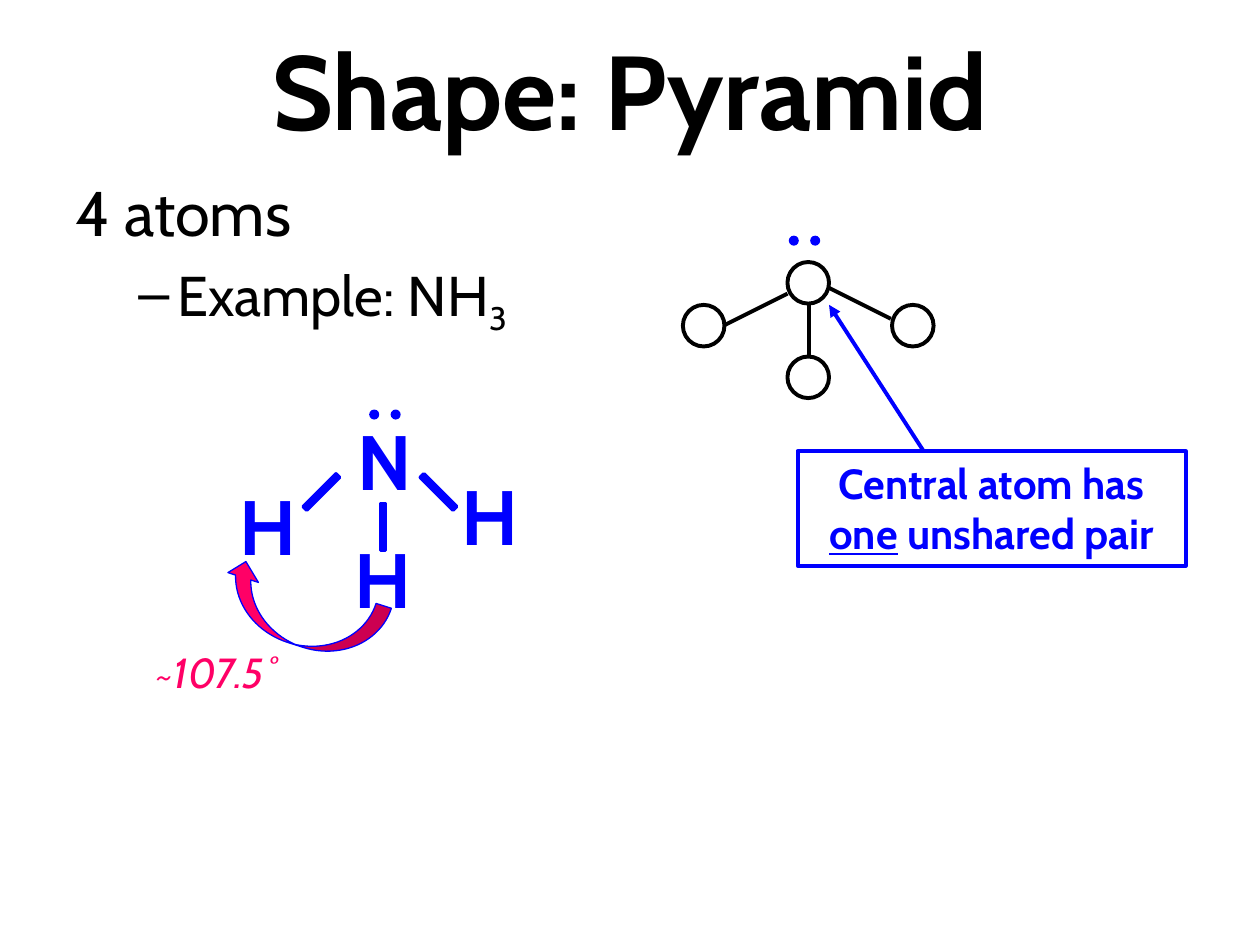
from dataclasses import dataclass, field

import pptx
import pptx.dml.color
import pptx.enum.shapes
import pptx.enum.text
import pptx.oxml.ns
import pptx.util
from lxml import etree
from pptx.util import Inches

SHAPE = pptx.enum.shapes.MSO_SHAPE
ALIGN = pptx.enum.text.PP_ALIGN
ANCHOR = pptx.enum.text.MSO_ANCHOR
qn = pptx.oxml.ns.qn

BLACK, WHITE, BLUE, PINK = "000000", "FFFFFF", "0000FF", "FF0066"
ATOM_SIZE = 0.33
DOT_SIZE = 0.08


@dataclass
class Span:
    text: str
    formats: dict = field(default_factory=dict)
    baseline: int = 0


@dataclass
class Para:
    spans: list[Span]
    size: float
    color: str = BLACK
    align: ALIGN = ALIGN.LEFT
    space_before: float = 0  # share of the text size
    margin: float = 0
    indent: float = 0
    bullet: str = ""
    formats: dict = field(default_factory=dict)


@dataclass
class Figure:
    kind: SHAPE
    left: float
    top: float
    width: float
    height: float
    fill: str = ""
    line: str = ""
    line_width: float = 2.25
    rotation: float = 0


@dataclass
class Line:
    start: tuple[float, float]
    end: tuple[float, float]
    color: str = BLACK
    arrow: bool = False


def rgb(value: str) -> pptx.dml.color.RGBColor:
    return pptx.dml.color.RGBColor.from_string(value)


def write(frame, paras: list[Para], anchor=ANCHOR.TOP) -> None:
    frame.word_wrap = True
    frame.vertical_anchor = anchor
    for index, item in enumerate(paras):
        para = frame.add_paragraph() if index else frame.paragraphs[0]
        para.alignment = item.align
        para.space_before = pptx.util.Pt(item.size * item.space_before)
        properties = para._p.get_or_add_pPr()
        properties.set("marL", str(Inches(item.margin)))
        properties.set("indent", str(Inches(item.indent)))
        if item.bullet:
            etree.SubElement(properties, qn("a:buChar")).set("char", item.bullet)
        for part in item.spans:
            span = para.add_run()
            span.text = part.text
            formats = {"name": "Cabin", "size": pptx.util.Pt(item.size)}
            for name, value in (formats | item.formats | part.formats).items():
                setattr(span.font, name, value)
            span.font.color.rgb = rgb(item.color)
            if part.baseline:
                span._r.get_or_add_rPr().set("baseline", str(part.baseline * 1000))


def add_text(page, left: float, top: float, width: float, height: float,
             paras: list[Para], anchor=ANCHOR.TOP) -> None:
    box = page.shapes.add_textbox(*map(Inches, (left, top, width, height)))
    write(box.text_frame, paras, anchor)


def add_figure(page, figure: Figure):
    place = (figure.left, figure.top, figure.width, figure.height)
    shape = page.shapes.add_shape(figure.kind, *map(Inches, place))
    shape.shadow.inherit = False
    shape.rotation = figure.rotation
    if figure.fill:
        shape.fill.solid()
        shape.fill.fore_color.rgb = rgb(figure.fill)
    else:
        shape.fill.background()
    if figure.line:
        shape.line.color.rgb = rgb(figure.line)
        shape.line.width = pptx.util.Pt(figure.line_width)
    else:
        shape.line.fill.background()
    return shape


def add_line(page, line: Line) -> None:
    connector = page.shapes.add_connector(
        pptx.enum.shapes.MSO_CONNECTOR.STRAIGHT, *map(Inches, line.start + line.end))
    connector.line.color.rgb = rgb(line.color)
    connector.line.width = pptx.util.Pt(2.25)
    if line.arrow:
        etree.SubElement(connector.line._get_or_add_ln(), qn("a:tailEnd")).set("type", "triangle")
    etree.SubElement(connector._element.spPr, qn("a:effectLst"))


def add_lone_pair(page, left: float, top: float) -> None:
    for offset in (0, 0.17):
        add_figure(page, Figure(SHAPE.OVAL, left + offset, top, DOT_SIZE, DOT_SIZE, BLUE))


def add_heading(page) -> None:
    title = Para([Span("Shape: Pyramid")], 60, align=ALIGN.CENTER, formats={"bold": True})
    add_text(page, 0.5, 0.08, 9, 1.25, [title], ANCHOR.MIDDLE)
    add_text(page, 0.5, 1.33, 9, 4.95, [
        Para([Span("4 atoms")], 36, space_before=0.2, margin=0.38, indent=-0.38),
        Para([Span("Example: NH"), Span("3", baseline=-25)], 32, space_before=0.2,
             margin=0.81, indent=-0.31, bullet="–"),
    ])


def add_pyramid(page) -> None:
    bonds = [
        Line((5.75, 2.58), (6.25, 2.33)),
        Line((6.57, 2.28), (7.07, 2.53)),
        Line((6.42, 2.9), (6.42, 2.4)),
    ]
    for bond in bonds:
        add_line(page, bond)
    for left, top in ((5.42, 2.42), (6.25, 2.08), (7.08, 2.42), (6.25, 2.83)):
        add_figure(page, Figure(SHAPE.OVAL, left, top, ATOM_SIZE, ATOM_SIZE, WHITE, BLACK))
    add_lone_pair(page, 6.26, 1.87)


def add_callout(page) -> None:
    callout = add_figure(page, Figure(SHAPE.RECTANGLE, 6.33, 3.58, 3.08, 0.91, line=BLUE))
    spans = [Span("Central atom has "), Span("one", {"underline": True}), Span(" unshared pair")]
    write(callout.text_frame, [Para(spans, 24, BLUE, ALIGN.CENTER, 0.5, formats={"bold": True})])
    add_line(page, Line((7.33, 3.58), (6.58, 2.42), BLUE, arrow=True))


def add_ammonia(page) -> None:
    for symbol, left, top in (("N", 2.59, 3.23), ("H", 3.43, 3.67),
                              ("H", 1.67, 3.75), ("H", 2.58, 4.17)):
        letter = Para([Span(symbol)], 44, BLUE, ALIGN.CENTER, 0.5, formats={"bold": True})
        add_text(page, left, top, 0.92, 0.84, [letter])
    for left, top, rotation in ((3.23, 3.82, 45), (2.3, 3.82, 135), (2.79, 4.1, 90)):
        add_figure(page, Figure(SHAPE.MATH_MINUS, left, top, 0.5, 0.17, BLUE, BLUE, 2, rotation))
    add_lone_pair(page, 2.93, 3.25)


def add_bond_angle(page) -> None:
    add_figure(page, Figure(SHAPE.CURVED_DOWN_ARROW, 1.72, 4.61, 1.34, 0.51,
                            PINK, BLUE, 0.75, 197.8))
    angle = Para([Span("~107.5˚")], 24, PINK, ALIGN.CENTER, 0.5, formats={"italic": True})
    add_text(page, 1, 5.08, 1.42, 0.51, [angle])


def main() -> None:
    deck = pptx.Presentation()
    deck.slide_width, deck.slide_height = Inches(10), Inches(7.5)
    page = deck.slides.add_slide(deck.slide_layouts[6])
    for add_part in (add_heading, add_callout, add_pyramid, add_ammonia, add_bond_angle):
        add_part(page)
    deck.save("out.pptx")


if __name__ == "__main__":
    main()
